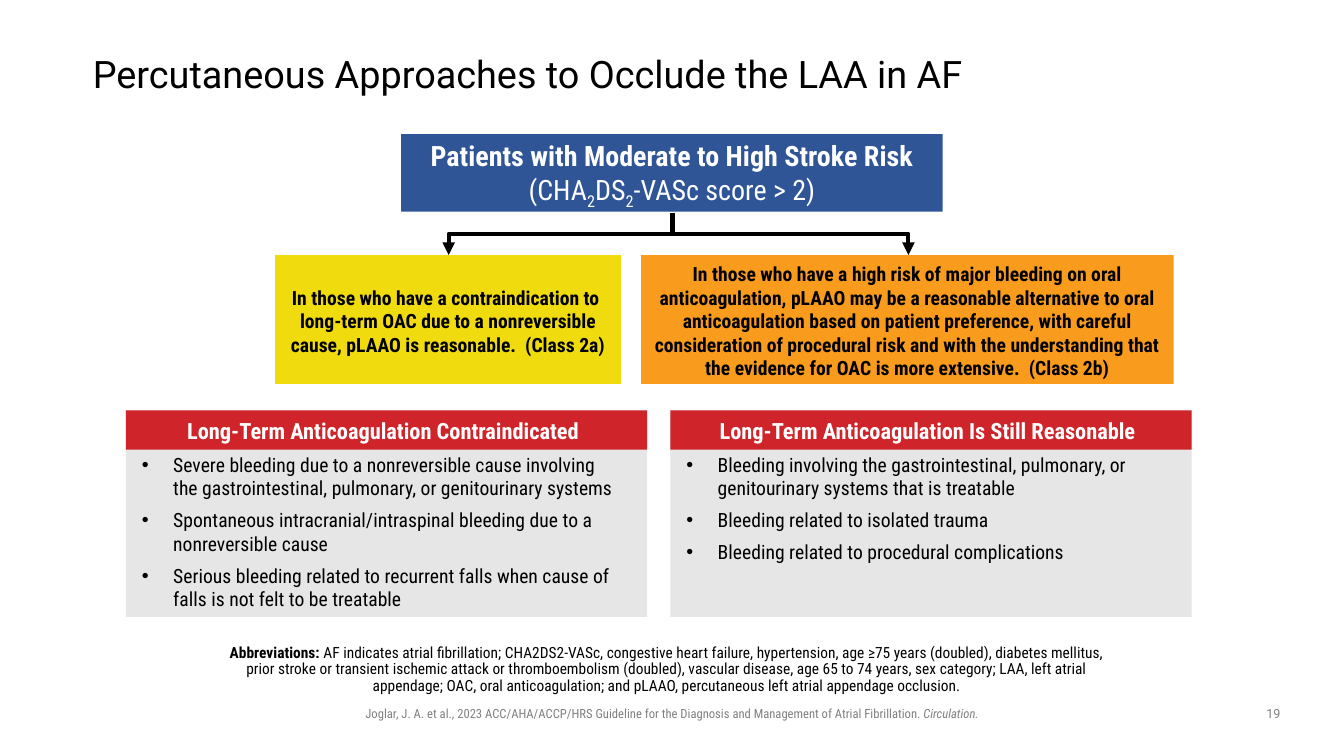
import pptx
import pptx.util
import pptx.dml.color
import pptx.enum.shapes
import pptx.enum.text
import pptx.oxml
import pptx.oxml.ns
from dataclasses import dataclass

Inches = pptx.util.Inches
Pt = pptx.util.Pt
ALIGN = pptx.enum.text.PP_ALIGN
ANCHOR = pptx.enum.text.MSO_ANCHOR
SHAPE = pptx.enum.shapes.MSO_SHAPE

TITLE = "Percutaneous Approaches to Occlude the LAA in AF"
# Each run is (text, style): "b" bold, "i" italic, "sub" subscript, "" plain
RISK = [
    [("Patients with Moderate to High Stroke Risk", "b")],
    [("(CHA", ""), ("2", "sub"), ("DS", ""), ("2", "sub"), ("-VASc score > 2)", "")],
]
# left, width, fill, arrow target, text
PATHS = [
    (2.73, 3.43, "F0DB0E", 4.45,
     "In those who have a contraindication to \nlong-term OAC due to a nonreversible "
     "cause, pLAAO is reasonable.  (Class 2a)"),
    (6.36, 5.28, "F99B1D", 9.01,
     "In those who have a high risk of major bleeding on oral anticoagulation, pLAAO "
     "may be a reasonable alternative to oral anticoagulation based on patient "
     "preference, with careful consideration of procedural risk and with the "
     "understanding that the evidence for OAC is more extensive.  (Class 2b)"),
]
PANELS = [
    ("Long-Term Anticoagulation Contraindicated", [
        "Severe bleeding due to a nonreversible cause involving the gastrointestinal, "
        "pulmonary, or genitourinary systems",
        "Spontaneous intracranial/intraspinal bleeding due to a nonreversible cause",
        "Serious bleeding related to recurrent falls when cause of falls is not felt "
        "to be treatable"]),
    ("Long-Term Anticoagulation Is Still Reasonable", [
        "Bleeding involving the gastrointestinal, pulmonary, or genitourinary systems "
        "that is treatable",
        "Bleeding related to isolated trauma",
        "Bleeding related to procedural complications"]),
]
ABBREVS = [
    ("Abbreviations: ", "b"),
    ("AF indicates atrial fibrillation; CHA2DS2-VASc, congestive heart failure, "
     "hypertension, age ≥75 years (doubled), diabetes mellitus, prior stroke or "
     "transient ischemic attack or thromboembolism (doubled), vascular disease, age 65 "
     "to 74 years, sex category; LAA, left atrial appendage; OAC, oral anticoagulation; "
     "and pLAAO, percutaneous left atrial appendage occlusion.", ""),
]
SOURCE = [
    ("Joglar, J. A. et al., 2023 ACC/AHA/ACCP/HRS Guideline for the Diagnosis and "
     "Management of Atrial Fibrillation. ", ""),
    ("Circulation.", "i"),
]
PAGE = "19"


@dataclass(frozen=True)
class Theme:
    head: str = "Roboto"
    body: str = "Roboto Condensed"
    black: str = "000000"
    white: str = "FFFFFF"
    gray: str = "808080"
    blue: str = "2F5597"
    red: str = "CF2429"
    pale: str = "E7E6E6"
    title: int = 27
    risk: int = 20
    label: int = 16
    text: int = 14
    note: int = 11
    foot: int = 9


THEME = Theme()
DROP_TOP, PATH_TOP = 2.11, 2.53
MID = 6.67
PANEL_LEFT, PANEL_TOP, PANEL_STEP = 1.25, 4.07, 5.4
PANEL_WIDTH, PANEL_HEIGHT, BAR_HEIGHT = 5.17, 2.05, 0.39

deck = pptx.Presentation()
deck.slide_width, deck.slide_height = Inches(13.33), Inches(7.5)
slide = deck.slides.add_slide(deck.slide_layouts[5])


def rgb(color):
    return pptx.dml.color.RGBColor.from_string(color)


def add_runs(para, runs, size, color, face=THEME.body):
    for text, style in runs:
        for num, line in enumerate(text.split("\n")):
            if num:
                para.add_line_break()
            run = para.add_run()
            run.text = line
            font = run.font
            font.name, font.size = face, Pt(size)
            font.bold, font.italic = style == "b", style == "i"
            font.color.rgb = rgb(color)
            if style == "sub":
                run._r.get_or_add_rPr().set("baseline", "-25000")


def set_frame(shape, insets=(0.1, 0.05, 0.1, 0.05), anchor=ANCHOR.TOP):
    """Prepare a wrapped text frame; insets run left, top, right, bottom."""
    frame = shape.text_frame
    frame.word_wrap = True
    frame.auto_size = pptx.enum.text.MSO_AUTO_SIZE.NONE
    frame.vertical_anchor = anchor
    (frame.margin_left, frame.margin_top,
     frame.margin_right, frame.margin_bottom) = map(Inches, insets)
    return frame


def add_box(left, top, width, height, fill):
    box = slide.shapes.add_shape(SHAPE.RECTANGLE, *map(Inches, (left, top, width, height)))
    box.shadow.inherit = False
    box.fill.solid()
    box.fill.fore_color.rgb = rgb(fill)
    box.line.fill.background()
    return box


def add_text(left, top, width, height, **frame):
    return set_frame(slide.shapes.add_textbox(
        *map(Inches, (left, top, width, height))), **frame)


def add_bullet(para):
    props = para._p.get_or_add_pPr()
    props.set("marL", str(Inches(0.31)))
    props.set("indent", str(-Inches(0.31)))
    for tag, key, value in (("a:buFont", "typeface", "Arial"), ("a:buChar", "char", "•")):
        node = pptx.oxml.ns.qn(tag)
        props.append(props.makeelement(node, {key: value}))


def add_arrow(target):
    """Bend down, across and down: an elbow turned a quarter about its centre."""
    span, drop = abs(target - MID), PATH_TOP - DROP_TOP
    x, y = (MID + target) / 2, (DROP_TOP + PATH_TOP) / 2
    ends = [x - drop / 2, x + drop / 2]
    left_side = target < MID
    if not left_side:
        ends.reverse()
    link = slide.shapes.add_connector(
        pptx.enum.shapes.MSO_CONNECTOR.ELBOW, Inches(ends[0]), Inches(y - span / 2),
        Inches(ends[1]), Inches(y + span / 2))
    link.line.width = Pt(3)
    link.line.color.rgb = rgb(THEME.black)
    props = link._element.spPr
    props.find(pptx.oxml.ns.qn("a:xfrm")).set("rot", str((90 if left_side else 270) * 60000))
    line = link.line._get_or_add_ln()
    line.append(line.makeelement(pptx.oxml.ns.qn("a:tailEnd"), {"type": "triangle"}))
    props.append(props.makeelement(pptx.oxml.ns.qn("a:effectLst"), {}))


def add_panel(left, label, points):
    add_box(left, PANEL_TOP, PANEL_WIDTH, PANEL_HEIGHT, THEME.pale)
    add_box(left, PANEL_TOP, PANEL_WIDTH, BAR_HEIGHT, THEME.red)
    frame = add_text(left + 0.06, PANEL_TOP + 0.02, 4.98, 2.04)
    para = frame.paragraphs[0]
    para.alignment, para.space_after = ALIGN.CENTER, Pt(6)
    add_runs(para, [(label, "b")], THEME.label, THEME.white)
    for point in points:
        para = frame.add_paragraph()
        para.space_after = Pt(6)
        add_bullet(para)
        add_runs(para, [(point, "")], THEME.text, THEME.black)


title = slide.shapes.title
title.left, title.top, title.width, title.height = map(Inches, (0.92, 0.4, 11.93, 0.72))
para = set_frame(title, (0, 0, 0, 0), ANCHOR.MIDDLE).paragraphs[0]
para.alignment, para.line_spacing = ALIGN.LEFT, 0.9
add_runs(para, [(TITLE, "")], THEME.title, THEME.black, THEME.head)

risk = add_box(3.98, 1.33, 5.37, 0.77, THEME.blue)
frame = set_frame(risk, (0, 0.04, 0, 0), ANCHOR.MIDDLE)
for num, runs in enumerate(RISK):
    para = frame.add_paragraph() if num else frame.paragraphs[0]
    para.alignment, para.line_spacing = ALIGN.CENTER, 0.9
    add_runs(para, runs, THEME.risk, THEME.white)

for left, width, fill, target, text in PATHS:
    box = add_box(left, PATH_TOP, width, 1.28, fill)
    para = set_frame(box, (0.1, 0.08, 0.1, 0.05), ANCHOR.MIDDLE).paragraphs[0]
    para.alignment = ALIGN.CENTER
    add_runs(para, [(text, "b")], THEME.text, THEME.black)
    add_arrow(target)

for num, (label, points) in enumerate(PANELS):
    add_panel(PANEL_LEFT + num * PANEL_STEP, label, points)

para = add_text(2.23, 6.35, 8.87, 0.5, insets=(0, 0.05, 0.1, 0.05)).paragraphs[0]
para.alignment, para.line_spacing = ALIGN.CENTER, 0.9
add_runs(para, ABBREVS, THEME.note, THEME.black)

for left, width, runs, face in ((2.94, 7.45, SOURCE, THEME.body),
                                (12.42, 0.42, [(PAGE, "")], THEME.head)):
    para = add_text(left, 6.95, width, 0.25).paragraphs[0]
    para.alignment = ALIGN.CENTER
    add_runs(para, runs, THEME.foot, THEME.gray, face)

deck.save("out.pptx")
